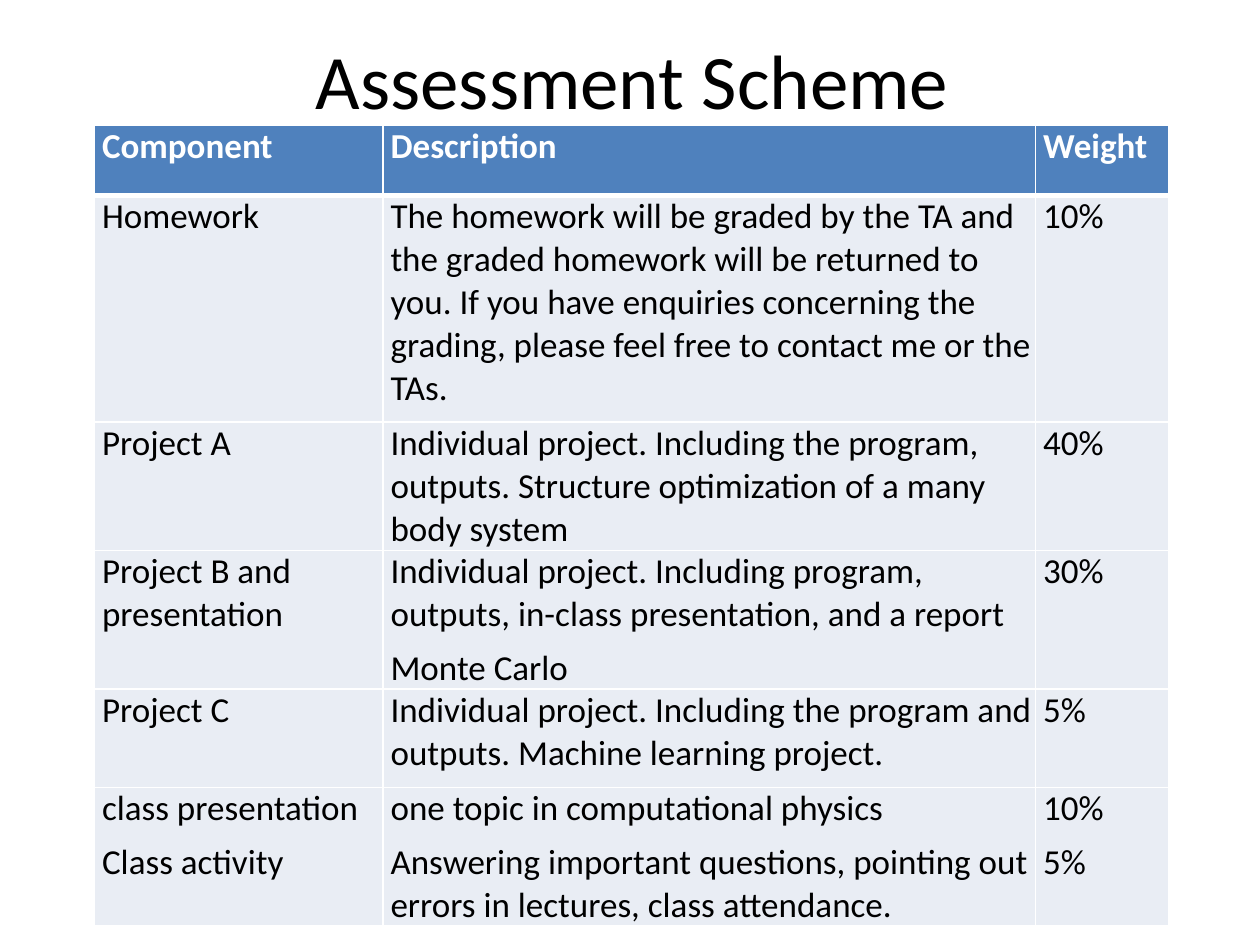
from typing import Any, NamedTuple

import lxml.etree
import pptx
import pptx.dml.color
import pptx.enum.text
import pptx.oxml.ns
import pptx.util

Inches = pptx.util.Inches
Pt = pptx.util.Pt
RGBColor = pptx.dml.color.RGBColor
Align = pptx.enum.text.PP_ALIGN
Anchor = pptx.enum.text.MSO_ANCHOR
qn = pptx.oxml.ns.qn

BLACK = RGBColor(0x00, 0x00, 0x00)
WHITE = RGBColor(0xFF, 0xFF, 0xFF)
BLUE = RGBColor(0x4F, 0x81, 0xBD)
PALE = RGBColor(0xE9, 0xED, 0xF4)

HEAD = {"name": "Calibri", "size": Pt(20), "bold": True}
BODY = HEAD | {"bold": False}
TITLE = {"name": "Calibri", "size": Pt(44)}
SPACE = {"space_before": Pt(3), "space_after": Pt(3)}
INSET = {"margin_left": Inches(0.02), "margin_right": Inches(0.02),
         "margin_top": 0, "margin_bottom": 0}
WIDTHS = [2.29, 5.18, 1.06]


class Row(NamedTuple):
    """One table row; a line break in a cell starts a new paragraph."""
    height: float
    name: str
    detail: str
    weight: str


ROWS = [
    Row(0.56, "Component", "Description", "Weight"),
    Row(1.8, "Homework",
        "The homework will be graded by the TA and the graded homework will be "
        "returned to you. If you have enquiries concerning the grading, please "
        "feel free to contact me or the TAs.", "10%"),
    Row(1.02, "Project A",
        "Individual project. Including the program, outputs. Structure "
        "optimization of a many body system", "40%"),
    Row(1.1, "Project B and presentation",
        "Individual project. Including program, outputs, in-class presentation, "
        "and a report\nMonte Carlo", "30%"),
    Row(0.78, "Project C",
        "Individual project. Including the program and outputs. Machine "
        "learning project.", "5%"),
    Row(1.1, "class presentation\nClass activity",
        "one topic in computational physics\nAnswering important questions, "
        "pointing out errors in lectures, class attendance.", "10%\n5%"),
]


def apply(item: Any, values: dict[str, Any]) -> None:
    for key, value in values.items():
        setattr(item, key, value)


def style(font: Any, values: dict[str, Any], color: RGBColor) -> None:
    apply(font, values)
    font.color.rgb = color


def edge(cell: Any, row: int) -> None:
    """Draw white borders, thick between the header and the body."""
    props = cell._tc.get_or_add_tcPr()
    thick = {(0, "B"), (1, "T")}
    for side in "LRTB":
        width = Pt(3 if (row, side) in thick else 1)
        line = lxml.etree.SubElement(props, qn(f"a:ln{side}"), w=str(width))
        fill = lxml.etree.SubElement(line, qn("a:solidFill"))
        lxml.etree.SubElement(fill, qn("a:srgbClr"), val=str(WHITE))


def draw_cell(cell: Any, text: str, row: int) -> None:
    edge(cell, row)
    apply(cell, INSET)
    cell.fill.solid()
    cell.fill.fore_color.rgb = PALE if row else BLUE
    cell.text_frame.text = text
    for para in cell.text_frame.paragraphs:
        apply(para, SPACE)
        para._p.get_or_add_pPr().set("marL", str(Inches(0.04)))
        style(para.runs[0].font, BODY if row else HEAD, BLACK if row else WHITE)


def draw_title(slide: Any, text: str) -> None:
    box = slide.shapes.add_textbox(Inches(0.59), 0, Inches(9), Inches(1.25))
    frame = box.text_frame
    apply(frame, {"word_wrap": True, "vertical_anchor": Anchor.MIDDLE, "text": text})
    para = frame.paragraphs[0]
    para.alignment = Align.CENTER
    style(para.runs[0].font, TITLE, BLACK)


def draw_table(slide: Any, rows: list[Row]) -> None:
    tall = sum(row.height for row in rows)
    table = slide.shapes.add_table(
        len(rows), len(WIDTHS), Inches(0.75), Inches(0.99),
        Inches(sum(WIDTHS)), Inches(tall)).table
    table.horz_banding = False
    for col, width in zip(table.columns, WIDTHS):
        col.width = Inches(width)
    for r, row in enumerate(rows):
        table.rows[r].height = Inches(row.height)
        for c, text in enumerate(row[1:]):
            draw_cell(table.cell(r, c), text, r)


def main() -> None:
    deck = pptx.Presentation()
    apply(deck, {"slide_width": Inches(10), "slide_height": Inches(7.5)})
    slide = deck.slides.add_slide(deck.slide_layouts[6])
    draw_title(slide, "Assessment Scheme ")
    draw_table(slide, ROWS)
    deck.save("out.pptx")


if __name__ == "__main__":
    main()
